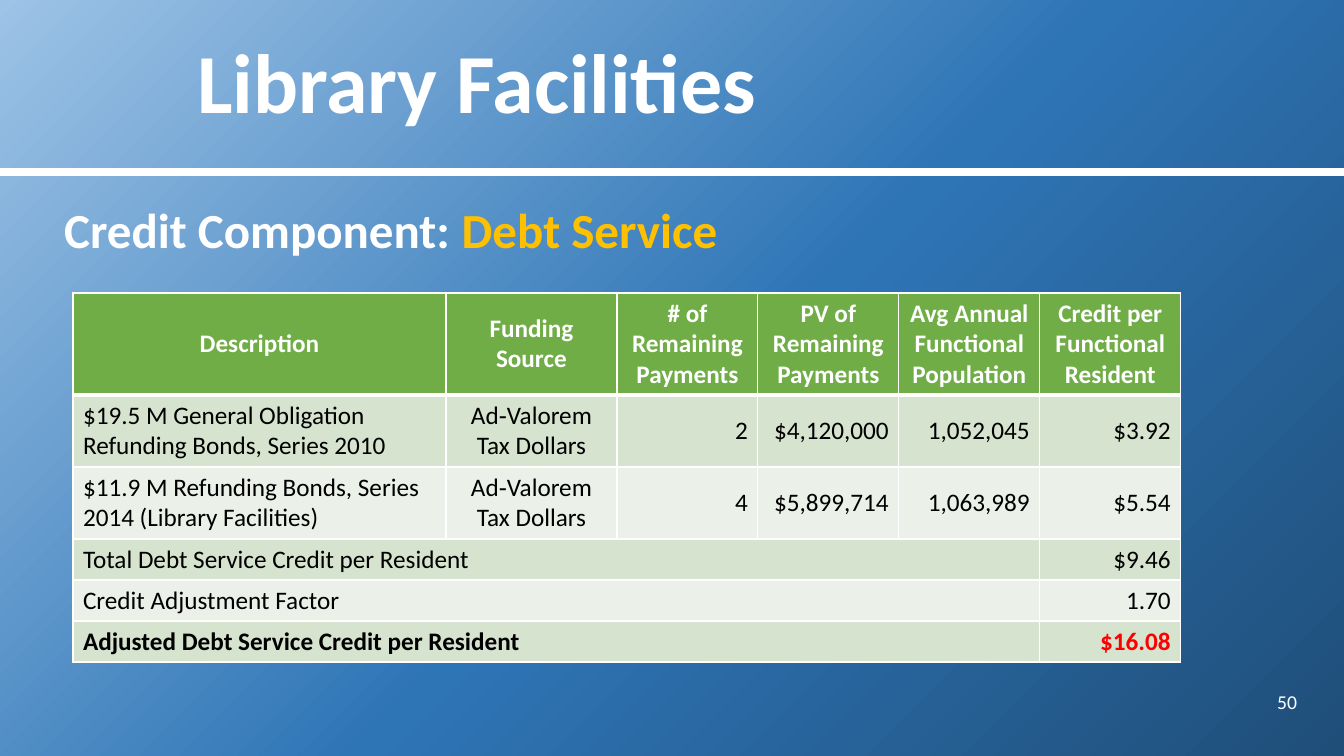
from dataclasses import dataclass

from lxml.etree import SubElement
from pptx import Presentation
from pptx.dml.color import RGBColor
from pptx.enum.shapes import MSO_CONNECTOR as CONN
from pptx.enum.text import MSO_ANCHOR as ANCHOR, MSO_AUTO_SIZE as AUTO, PP_ALIGN as ALIGN
from pptx.oxml import parse_xml
from pptx.oxml.ns import nsdecls, qn
from pptx.util import Emu, Pt

SCALE = 914400 / 100.8


@dataclass(frozen=True)
class Theme:
    font: str = "Calibri"
    white: str = "FFFFFF"
    black: str = "000000"
    gold: str = "FFC000"
    red: str = "FF0000"
    green: str = "70AD47"
    bands: tuple = ("D5E3CF", "EBF1E9")
    backdrop: tuple = ((0, "9DC3E6"), (53, "2E75B6"), (100, "1F4E79"))
    title: int = 60
    subtitle: int = 35
    table: int = 18
    number: int = 14
    rule: int = 6
    border: int = 1
    header_border: int = 3


T = Theme()
COLUMNS = (373, 171, 141, 141, 141, 141)
HEIGHTS = (102, 72, 72, 41, 41, 41)
HEADER = ("Description", "Funding Source", "# of Remaining Payments",
          "PV of Remaining Payments", "Avg Annual Functional Population",
          "Credit per Functional Resident")
BONDS = (
    ("$19.5 M General Obligation Refunding Bonds, Series 2010",
     "Ad‐Valorem Tax Dollars", "2", "$4,120,000", "1,052,045", "$3.92"),
    ("$11.9 M Refunding Bonds, Series 2014 (Library Facilities)",
     "Ad‐Valorem Tax Dollars", "4", "$5,899,714", "1,063,989", "$5.54"),
)
TOTALS = (("Total Debt Service Credit per Resident", "$9.46"),
          ("Credit Adjustment Factor", "1.70"),
          ("Adjusted Debt Service Credit per Resident", "$16.08"))


def px(n):
    return Emu(round(n * SCALE))


def apply(obj, values):
    for name, value in values.items():
        setattr(obj, name, value)


def place(sp, *box):
    apply(sp, dict(zip(("left", "top", "width", "height"), map(px, box))))


def add_run(p, text, size, color, bold=False):
    r = p.add_run()
    r.text = text
    apply(r.font, {"name": T.font, "size": Pt(size), "bold": bold})
    r.font.color.rgb = RGBColor.from_string(color)
    return r


def paint_background(s):
    stops = "".join(f'<a:gs pos="{pos * 1000}"><a:srgbClr val="{color}"/></a:gs>'
                    for pos, color in T.backdrop)
    fill = s.background.fill
    fill.solid()
    bg_pr = s.element.cSld.find(qn("p:bg")).find(qn("p:bgPr"))
    bg_pr.replace(bg_pr[0], parse_xml(
        f'<a:gradFill {nsdecls("a")} rotWithShape="1"><a:gsLst>{stops}</a:gsLst>'
        '<a:path path="circle"><a:fillToRect r="100000" b="100000"/></a:path></a:gradFill>'))


def add_rule(s, y, width):
    line = s.shapes.add_connector(CONN.STRAIGHT, 0, px(y), px(width), px(y))
    line.line.width = Pt(T.rule)
    line.line.color.rgb = RGBColor.from_string(T.white)
    SubElement(line._element.spPr, qn("a:effectLst"))


def add_title(s, text):
    sp = s.shapes.title
    place(sp, 187, 0, 1119, 172)
    tf = sp.text_frame
    apply(tf, {"word_wrap": True, "auto_size": AUTO.NONE, "vertical_anchor": ANCHOR.MIDDLE})
    p = tf.paragraphs[0]
    apply(p, {"alignment": ALIGN.LEFT, "line_spacing": 0.9})
    r = add_run(p, text, T.title, T.white, True)
    r.font.fill._xPr.find(qn("a:solidFill")).addnext(parse_xml(
        f'<a:effectLst {nsdecls("a")}><a:outerShdw blurRad="38100" dist="38100" dir="2700000">'
        f'<a:srgbClr val="{T.black}"><a:alpha val="43000"/></a:srgbClr>'
        '</a:outerShdw></a:effectLst>'))


def add_subtitle(s, label, topic):
    sp = s.placeholders[1]
    place(sp, 54, 183, 1252, 110)
    tf = sp.text_frame
    apply(tf, {"word_wrap": True, "auto_size": AUTO.NONE, "vertical_anchor": ANCHOR.TOP})
    p = tf.paragraphs[0]
    p_pr = p._p.get_or_add_pPr()
    p_pr.set("marL", "0")
    p_pr.set("indent", "0")
    SubElement(p_pr, qn("a:buNone"))
    apply(p, {"alignment": ALIGN.LEFT, "line_spacing": 1.2, "space_before": Pt(0)})
    add_run(p, label, T.subtitle, T.white, True)
    add_run(p, topic, T.subtitle, T.gold, True)


def add_number(s, text):
    sp = s.shapes.add_textbox(px(1218), px(682), px(89), px(40))
    tf = sp.text_frame
    apply(tf, {"word_wrap": True, "vertical_anchor": ANCHOR.MIDDLE})
    p = tf.paragraphs[0]
    p.alignment = ALIGN.RIGHT
    add_run(p, text, T.number, T.white)


def style_cell(cell, row):
    cell.fill.solid()
    cell.fill.fore_color.rgb = RGBColor.from_string(T.bands[(row - 1) % 2] if row else T.green)
    widths = {"L": T.border, "R": T.border,
              "T": T.header_border if row == 1 else T.border,
              "B": T.header_border if row == 0 else T.border}
    for i, (side, width) in enumerate(widths.items()):
        cell._tc.get_or_add_tcPr().insert(i, parse_xml(
            f'<a:ln{side} {nsdecls("a")} w="{Pt(width)}"><a:solidFill>'
            f'<a:srgbClr val="{T.white}"/></a:solidFill></a:ln{side}>'))


def fill_cell(cell, text, align, color=T.black, bold=False):
    cell.vertical_anchor = ANCHOR.MIDDLE
    p = cell.text_frame.paragraphs[0]
    p.alignment = align
    add_run(p, text, T.table, color, bold)


def add_credit_table(s):
    frame = s.shapes.add_table(len(HEIGHTS), len(COLUMNS), px(73), px(293),
                               px(sum(COLUMNS)), px(sum(HEIGHTS)))
    table = frame.table
    for column, width in zip(table.columns, COLUMNS):
        column.width = px(width)
    for i, (row, height) in enumerate(zip(table.rows, HEIGHTS)):
        row.height = px(height)
        for cell in row.cells:
            style_cell(cell, i)
    for j, text in enumerate(HEADER):
        fill_cell(table.cell(0, j), text, ALIGN.CENTER, T.white, True)
    aligns = (ALIGN.LEFT, ALIGN.CENTER) + (ALIGN.RIGHT,) * 4
    for i, bond in enumerate(BONDS, 1):
        for j, (text, align) in enumerate(zip(bond, aligns)):
            fill_cell(table.cell(i, j), text, align)
    last = len(COLUMNS) - 1
    for i, (label, value) in enumerate(TOTALS, 1 + len(BONDS)):
        final = i == len(HEIGHTS) - 1
        table.cell(i, 0).merge(table.cell(i, last - 1))
        fill_cell(table.cell(i, 0), label, ALIGN.LEFT, bold=final)
        fill_cell(table.cell(i, last), value, ALIGN.RIGHT, T.red if final else T.black, final)


def main():
    prs = Presentation()
    apply(prs, {"slide_width": px(1344), "slide_height": px(756)})
    s = prs.slides.add_slide(prs.slide_layouts[1])
    paint_background(s)
    add_rule(s, 172, 1344)
    add_title(s, "Library Facilities")
    add_number(s, "50")
    add_subtitle(s, "Credit Component: ", "Debt Service")
    add_credit_table(s)
    prs.save("out.pptx")


if __name__ == "__main__":
    main()
